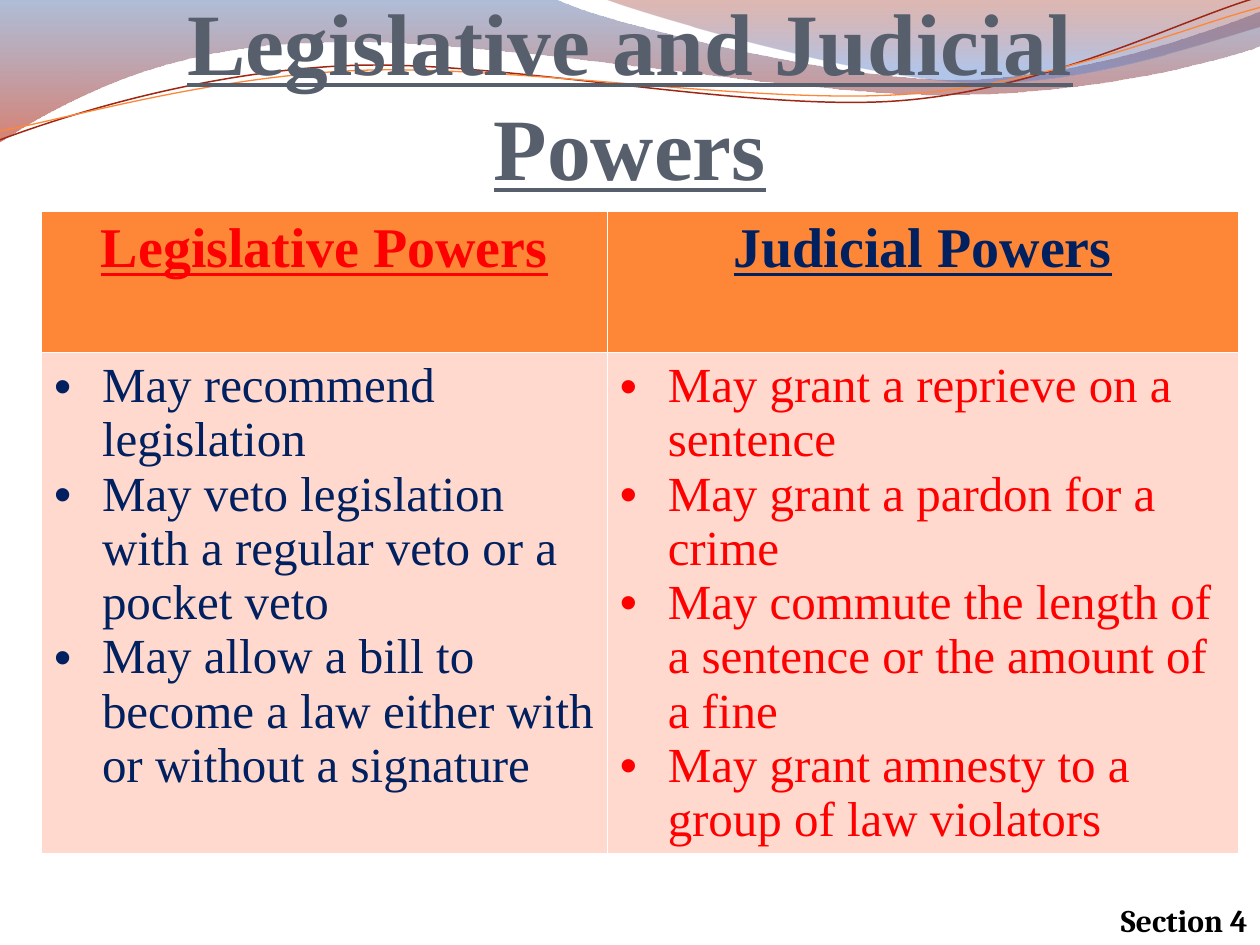
import math
from dataclasses import dataclass

from lxml import etree
from pptx import Presentation
from pptx import util as u
from pptx.dml.color import RGBColor
from pptx.enum import text
from pptx.oxml.ns import qn


@dataclass(frozen=True)
class Theme:
    title: str = "575F6D"
    red: str = "FF0000"
    navy: str = "002060"
    black: str = "000000"
    orange: str = "FE8637"
    brick: str = "9E2713"
    blush: str = "FFD9CE"
    serif: str = "Times New Roman"
    label_font: str = "Cambria"
    title_size: int = 50
    header_size: int = 32
    body_size: int = 28
    label_size: int = 18


@dataclass(frozen=True)
class Stop:
    position: float
    color: str
    opacity: int


@dataclass(frozen=True)
class Wave:
    """Segments hold 2 numbers for a straight line or 6 for a cubic curve."""
    start: tuple
    segments: tuple
    stops: tuple = ()
    line: str = ""
    width: float = 0
    tilt: float = 0
    center: tuple = (0, 0)


@dataclass(frozen=True)
class Column:
    header: str
    header_color: str
    items: tuple
    item_color: str
    width: float


T = Theme()

WAVES = (
    Wave((0, -0.01), (
        (4.4, -0.01), (4.76, 0.17, 6.64, 0.63, 7.58, 0.63),
        (8.53, 0.63, 9.58, 0.26, 10, 0.09), (10.01, 0.36),
        (9.83, 0.44, 8.7, 0.76, 7.46, 0.75), (6.22, 0.75, 3.82, 0.28, 2.57, 0.34),
        (1.29, 0.35, 0.46, 0.83, -0.01, 1.13), (0, -0.01)),
        stops=(Stop(0, "4F6EA8", 45), Stop(1, "B61A00", 55))),
    Wave((4.79, -0.01), (
        (5.09, 0.11, 6.82, 0.62, 7.69, 0.65),
        (8.56, 0.69, 9.61, 0.32, 10, 0.21), (10, 0), (4.79, -0.01)),
        stops=(Stop(0, "951500", 30), Stop(0.8, "5681D1", 45))),
    Wave((0, 1.11), (
        (0.48, 0.93, 1.58, 0.57, 2.77, 0.52), (3.95, 0.47, 5.93, 0.89, 7.13, 0.8),
        (8.33, 0.71, 9.38, 0.15, 9.98, -0.02)),
        line=T.brick, width=0.85, tilt=-2.7, center=(4.99, 0.58)),
    Wave((0, 1.04), (
        (0.47, 0.96, 1.64, 0.61, 2.83, 0.56), (4.03, 0.51, 5.97, 0.83, 7.17, 0.75),
        (8.36, 0.67, 9.41, 0.21, 10, 0.06)),
        line=T.orange, width=0.75, tilt=-2.7, center=(5, 0.59)),
)

COLUMNS = (
    Column("Legislative Powers", T.red, (
        "May recommend legislation",
        "May veto legislation with a regular veto or a pocket veto",
        "May allow a bill to become a law either with or without a signature",
    ), T.navy, 4.49),
    Column("Judicial Powers", T.navy, (
        "May grant a reprieve on a sentence",
        "May grant a pardon for a crime",
        "May commute the length of a sentence or the amount of a fine",
        "May grant amnesty to a group of law violators",
    ), T.red, 5.01),
)
ROW_HEIGHTS = (1.12, 3.88)


def rgb(value: str) -> RGBColor:
    return RGBColor.from_string(value)


def add_run(p, wording: str, size: int, color: str, font: str = T.serif,
            bold: bool = True, underline: bool = False) -> None:
    r = p.add_run()
    r.text = wording
    r.font.size, r.font.name = u.Pt(size), font
    r.font.bold, r.font.underline = bold, underline
    r.font.color.rgb = rgb(color)


def untilt(wave: Wave, point: tuple) -> tuple:
    """Turn a point back around the wave's center, to where it lies before rotation."""
    angle = math.radians(-wave.tilt)
    (cx, cy), (x, y) = wave.center, point
    dx, dy = x - cx, y - cy
    return (u.Inches(cx + dx * math.cos(angle) - dy * math.sin(angle)),
            u.Inches(cy + dx * math.sin(angle) + dy * math.cos(angle)))


def bend(sp, segments: tuple) -> None:
    """Join each curve's three straight steps into one cubic curve."""
    steps = iter(list(sp.element.iter(qn("a:lnTo"))))
    for seg in segments:
        first, *others = [next(steps) for _ in range(len(seg) // 2)]
        if others:
            curve = etree.Element(qn("a:cubicBezTo"))
            first.addprevious(curve)
            for step in (first, *others):
                curve.append(step[0])
                step.getparent().remove(step)


def add_wave(s, wave: Wave) -> None:
    points = [seg[i:i + 2] for seg in wave.segments for i in range(0, len(seg), 2)]
    builder = s.shapes.build_freeform(*untilt(wave, wave.start))
    builder.add_line_segments([untilt(wave, pt) for pt in points],
                              close=bool(wave.stops))
    sp = builder.convert_to_shape()
    bend(sp, wave.segments)
    sp.rotation = wave.tilt
    sp.shadow.inherit = False
    if not wave.stops:
        sp.fill.background()
        sp.line.color.rgb, sp.line.width = rgb(wave.line), u.Pt(wave.width)
        return
    sp.line.fill.background()
    sp.fill.gradient()
    sp.fill.gradient_angle = 270
    for target, stop in zip(sp.fill.gradient_stops, wave.stops):
        target.position, target.color.rgb = stop.position, rgb(stop.color)
    for clr, stop in zip(sp.element.spPr.iter(qn("a:srgbClr")), wave.stops):
        etree.SubElement(clr, qn("a:alpha"), val=str(stop.opacity * 1000))


def set_bullet(p, indent: float = 0.38) -> None:
    pPr = p._p.get_or_add_pPr()
    pPr.set("marL", str(u.Inches(indent)))
    pPr.set("indent", str(-u.Inches(indent)))
    etree.SubElement(pPr, qn("a:buFont"), typeface="Arial")
    etree.SubElement(pPr, qn("a:buChar"), char="•")


def fill_cell(cell, color: str) -> None:
    cell.fill.solid()
    cell.fill.fore_color.rgb = rgb(color)


def add_powers_table(s) -> None:
    """Add the table; its white borders come from the default table style."""
    frame = s.shapes.add_table(
        2, len(COLUMNS), u.Inches(0.33), u.Inches(1.68),
        u.Inches(sum(c.width for c in COLUMNS)), u.Inches(sum(ROW_HEIGHTS)))
    table = frame.table
    for row, height in zip(table.rows, ROW_HEIGHTS):
        row.height = u.Inches(height)
    for i, column in enumerate(COLUMNS):
        table.columns[i].width = u.Inches(column.width)
        header, body = table.cell(0, i), table.cell(1, i)
        fill_cell(header, T.orange)
        fill_cell(body, T.blush)
        p = header.text_frame.paragraphs[0]
        p.alignment = text.PP_ALIGN.CENTER
        add_run(p, column.header, T.header_size, column.header_color, underline=True)
        tf = body.text_frame
        for n, item in enumerate(column.items):
            p = tf.add_paragraph() if n else tf.paragraphs[0]
            set_bullet(p)
            add_run(p, item, T.body_size, column.item_color, bold=False)


def place_title(s) -> None:
    sp = s.shapes.title
    sp.left, sp.top, sp.width, sp.height = map(u.Inches, (0.5, 0.67, 9, 0.9))
    tf = sp.text_frame
    tf.word_wrap, tf.auto_size = True, text.MSO_AUTO_SIZE.NONE
    tf.vertical_anchor = text.MSO_ANCHOR.BOTTOM
    tf.margin_left = tf.margin_right = tf.margin_bottom = 0
    tf.margin_top = u.Inches(0.05)
    p = tf.paragraphs[0]
    p.alignment = text.PP_ALIGN.CENTER
    add_run(p, "Legislative and Judicial Powers", T.title_size, T.title, underline=True)
    sp.element.getparent().append(sp.element)  # in front of the waves


def add_section_label(s) -> None:
    sp = s.shapes.add_textbox(*map(u.Inches, (8.67, 7.1, 1.33, 0.4)))
    tf = sp.text_frame
    tf.word_wrap, tf.auto_size = True, text.MSO_AUTO_SIZE.SHAPE_TO_FIT_TEXT
    p = tf.paragraphs[0]
    p.alignment = text.PP_ALIGN.RIGHT
    add_run(p, "Section 4", T.label_size, T.black, font=T.label_font)


def main() -> None:
    prs = Presentation()
    prs.slide_width, prs.slide_height = u.Inches(10), u.Inches(7.5)
    s = prs.slides.add_slide(prs.slide_layouts[5])
    for wave in WAVES:
        add_wave(s, wave)
    place_title(s)
    add_powers_table(s)
    add_section_label(s)
    prs.save("out.pptx")


if __name__ == "__main__":
    main()
